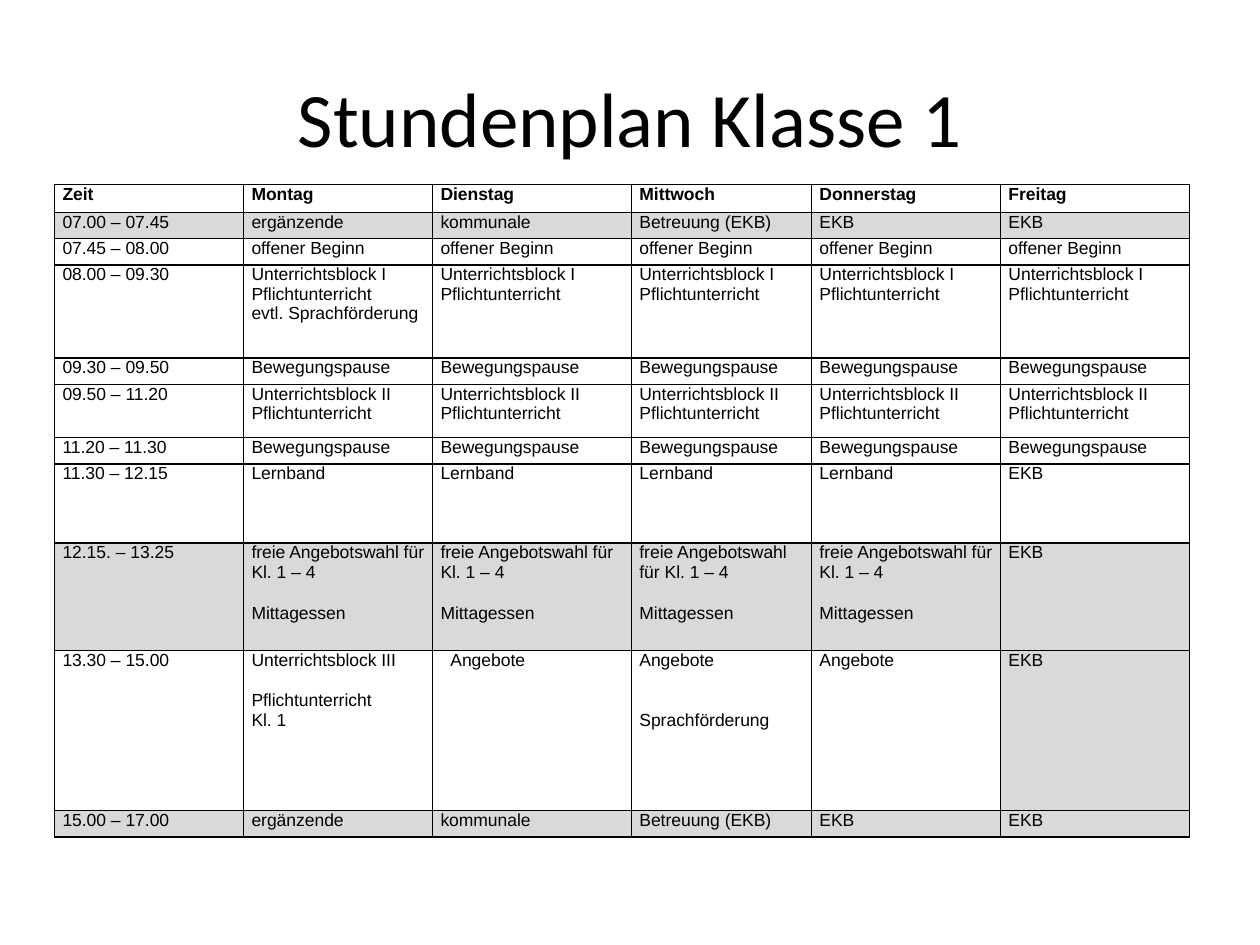
from typing import NamedTuple

from lxml import etree
from pptx import Presentation
from pptx.dml.color import RGBColor
from pptx.enum.text import MSO_ANCHOR, PP_ALIGN
from pptx.oxml.ns import qn
from pptx.util import Cm, Pt

MIDDLE = MSO_ANCHOR.MIDDLE
CENTER = PP_ALIGN.CENTER
BLACK = RGBColor(0x00, 0x00, 0x00)
GREY = RGBColor(0xD9, 0xD9, 0xD9)
BORDER_SIDES = ("a:lnL", "a:lnR", "a:lnT", "a:lnB")
BORDER_WIDTH = Pt(1)
COLUMN_WIDTHS = (3.81, 3.81, 4.01, 3.63, 3.81, 3.81)
CELL_FORMAT = {
    "margin_left": Cm(0.16),
    "margin_right": Cm(0.16),
    "margin_top": 0,
    "margin_bottom": 0,
}
FRAME_FORMAT = {"word_wrap": True, "vertical_anchor": MIDDLE}
TITLE_FONT = {"name": "Calibri", "size": Pt(44)}
BODY_FONT = {"name": "Arial", "size": Pt(10), "bold": False}
HEADER_FONT = BODY_FONT | {"bold": True}


class Line(NamedTuple):
    text: str
    before: float = 6
    after: float = 6
    indent: float = 0


class Period(NamedTuple):
    height: float
    time: str
    lessons: list[list[Line]]
    shaded: tuple[int, ...] = ()
    font: dict = BODY_FONT


ALL_COLUMNS = tuple(range(len(COLUMN_WIDTHS)))
EKB = [Line("EKB")]
CARE = [[Line("ergänzende")], [Line("kommunale")], [Line("Betreuung (EKB)")], EKB, EKB]
WEEKDAYS = [[Line(day)] for day in ("Montag", "Dienstag", "Mittwoch", "Donnerstag", "Freitag")]
OPENING = [Line("offener Beginn")]
BREAK = [Line("Bewegungspause")]
BLOCK_ONE = [Line("Unterrichtsblock I", after=0), Line("Pflichtunterricht", before=0, after=0)]
BLOCK_ONE_LANGUAGE = BLOCK_ONE + [Line("evtl. Sprachförderung", before=0)]
BLOCK_TWO = [Line("Unterrichtsblock II Pflichtunterricht")]
BLOCK_THREE = [Line("Unterrichtsblock III"), Line("Pflichtunterricht\vKl. 1")]
LEARNING = [Line("Lernband")]
LUNCH = [Line("freie Angebotswahl für Kl. 1 – 4"), Line("Mittagessen")]
OFFERS = [Line("Angebote")]
OFFERS_INDENTED = [Line("Angebote", indent=0.2)]
OFFERS_LANGUAGE = OFFERS + [Line("Sprachförderung", before=17.5)]

TIMETABLE = [
    Period(0.56, "Zeit", WEEKDAYS, font=HEADER_FONT),
    Period(0.53, "07.00 – 07.45", CARE, ALL_COLUMNS),
    Period(0.53, "07.45 – 08.00", [OPENING] * 5),
    Period(1.88, "08.00 – 09.30", [BLOCK_ONE_LANGUAGE] + [BLOCK_ONE] * 4),
    Period(0.53, "09.30 – 09.50", [BREAK] * 5),
    Period(1.07, "09.50 – 11.20", [BLOCK_TWO] * 5),
    Period(0.53, "11.20 – 11.30", [BREAK] * 5),
    Period(1.60, "11.30 – 12.15", [LEARNING] * 4 + [EKB]),
    Period(2.16, "12.15. – 13.25", [LUNCH] * 4 + [EKB], ALL_COLUMNS),
    Period(3.23, "13.30 – 15.00",
           [BLOCK_THREE, OFFERS_INDENTED, OFFERS_LANGUAGE, OFFERS, EKB], (5,)),
    Period(0.53, "15.00 – 17.00", CARE, ALL_COLUMNS),
]


def apply_format(target, values: dict) -> None:
    for name, value in values.items():
        setattr(target, name, value)


def style_font(font, values: dict) -> None:
    apply_format(font, values)
    font.color.rgb = BLACK


def add_title(page, text: str) -> None:
    box = page.shapes.add_textbox(Cm(1.27), Cm(0.76), Cm(22.86), Cm(3.18))
    apply_format(box.text_frame, FRAME_FORMAT)
    para = box.text_frame.paragraphs[0]
    para.alignment = CENTER
    span = para.add_run()
    span.text = text
    style_font(span.font, TITLE_FONT)


def add_borders(cell) -> None:
    properties = cell._tc.get_or_add_tcPr()
    for position, side in enumerate(BORDER_SIDES):
        border = etree.Element(qn(side), w=str(BORDER_WIDTH))
        fill = etree.SubElement(border, qn("a:solidFill"))
        etree.SubElement(fill, qn("a:srgbClr"), val=str(BLACK))
        properties.insert(position, border)


def fill_cell(cell, lines: list[Line], font: dict, shaded: bool) -> None:
    apply_format(cell, CELL_FORMAT)
    if shaded:
        cell.fill.solid()
        cell.fill.fore_color.rgb = GREY
    else:
        cell.fill.background()
    add_borders(cell)
    frame = cell.text_frame
    for index, line in enumerate(lines):
        para = frame.add_paragraph() if index else frame.paragraphs[0]
        para.text = line.text
        para.space_before = Pt(line.before)
        para.space_after = Pt(line.after)
        if line.indent:
            para._p.get_or_add_pPr().set("marL", str(Cm(line.indent)))
        for span in para.runs:
            style_font(span.font, font)


def add_timetable(page, periods: list[Period]) -> None:
    width = Cm(sum(COLUMN_WIDTHS))
    height = Cm(sum(period.height for period in periods))
    frame = page.shapes.add_table(
        len(periods), len(COLUMN_WIDTHS), Cm(1.1), Cm(3.72), width, height
    )
    table = frame.table
    apply_format(table, {"first_row": False, "horz_banding": False})
    for column, column_width in zip(table.columns, COLUMN_WIDTHS):
        column.width = Cm(column_width)
    for row, period in zip(table.rows, periods):
        row.height = Cm(period.height)
        entries = [[Line(period.time)]] + period.lessons
        for index, (cell, lines) in enumerate(zip(row.cells, entries)):
            fill_cell(cell, lines, period.font, index in period.shaded)


def main() -> None:
    deck = Presentation()
    apply_format(deck, {"slide_width": Cm(25.4), "slide_height": Cm(19.05)})
    page = deck.slides.add_slide(deck.slide_layouts[6])
    add_title(page, "Stundenplan Klasse 1")
    add_timetable(page, TIMETABLE)
    deck.save("out.pptx")


if __name__ == "__main__":
    main()
